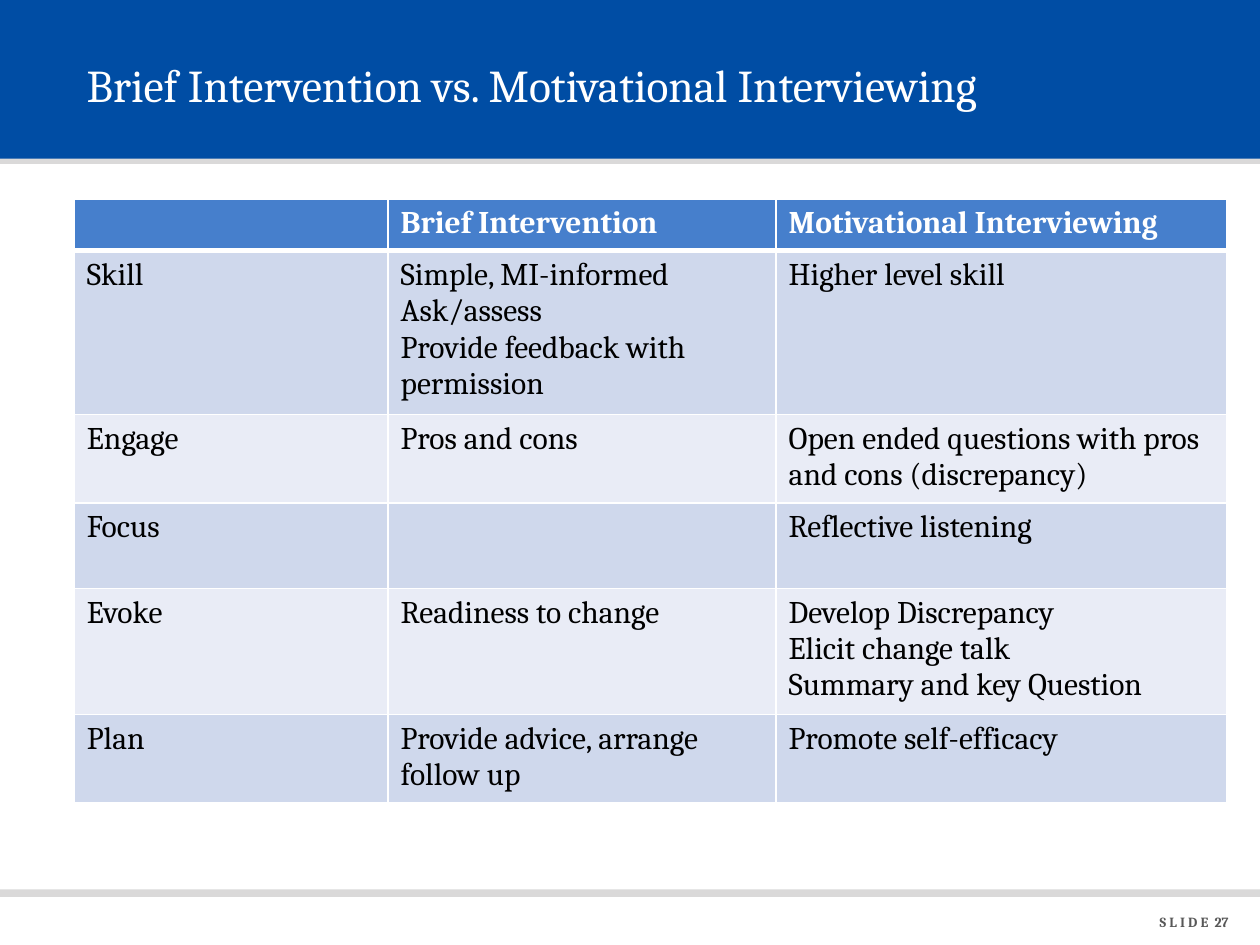
"""Build a slide comparing brief intervention with motivational interviewing."""
import pptx
import pptx.dml.color
import pptx.enum.shapes
import pptx.enum.text
import pptx.oxml
import pptx.util
from pptx.util import Inches


def color(hex_value):
    return pptx.dml.color.RGBColor.from_string(hex_value)


def write(frame, text, size=18, ink="000000", bold=False, align=None):
    frame.word_wrap = True
    for index, line in enumerate(text.split("\n")):
        paragraph = frame.add_paragraph() if index else frame.paragraphs[0]
        paragraph.alignment = align
        paragraph.font.size = pptx.util.Pt(size)
        run = paragraph.add_run()
        run.text = line
        run.font.name = "Cambria"
        run.font.size = pptx.util.Pt(size)
        run.font.bold = bold
        run.font.color.rgb = color(ink)


presentation = pptx.Presentation()
presentation.slide_width = Inches(10)
presentation.slide_height = Inches(7.5)
slide = presentation.slides.add_slide(presentation.slide_layouts[6])

bands = [
    (1.05, 0.25, "DAD9D9"),
    (-0.01, 1.27, "004DA4"),
    (7.06, 0.06, "DAD9D9"),
]
for top, height, fill in bands:
    band = slide.shapes.add_shape(
        pptx.enum.shapes.MSO_SHAPE.RECTANGLE,
        Inches(0), Inches(top), Inches(10), Inches(height))
    band.shadow.inherit = False
    band.fill.solid()
    band.fill.fore_color.rgb = color(fill)
    band.line.fill.background()

slide_number = slide.shapes.add_textbox(Inches(8.43), Inches(7.2), Inches(1.42), Inches(0.23))
write(slide_number.text_frame, "S L I D E  27", size=8, ink="585858", bold=True,
      align=pptx.enum.text.PP_ALIGN.RIGHT)

title = slide.shapes.add_textbox(Inches(0.59), Inches(0.17), Inches(8.9), Inches(1))
title.text_frame.vertical_anchor = pptx.enum.text.MSO_ANCHOR.MIDDLE
write(title.text_frame, "Brief Intervention vs. Motivational Interviewing", size=26, ink="FFFFFF")

comparison = [
    (0.41, "", "Brief Intervention", "Motivational Interviewing"),
    (1.25, "Skill", "Simple, MI-informed\nAsk/assess\nProvide feedback with permission",
     "Higher level skill"),
    (0.68, "Engage", "Pros and cons", "Open ended questions with pros and cons (discrepancy)"),
    (0.68, "Focus", "", "Reflective listening"),
    (0.96, "Evoke", "Readiness to change",
     "Develop Discrepancy\nElicit change talk\nSummary and key Question"),
    (0.68, "Plan", "Provide advice, arrange follow up", "Promote self-efficacy"),
]
column_widths = [2.49, 3.08, 3.58]
table = slide.shapes.add_table(
    len(comparison), len(column_widths), Inches(0.59), Inches(1.58),
    Inches(sum(column_widths)), Inches(sum(row[0] for row in comparison))).table
for column, width in zip(table.columns, column_widths):
    column.width = Inches(width)

for row_index, (height, *texts) in enumerate(comparison):
    table.rows[row_index].height = Inches(height)
    is_header = row_index == 0
    fill = "467FCC" if is_header else ("E9ECF6", "CFD8EC")[row_index % 2]
    for column_index, text in enumerate(texts):
        cell = table.cell(row_index, column_index)
        if text:
            write(cell.text_frame, text, ink="FFFFFF" if is_header else "000000", bold=is_header)
        borders = {"lnL": 1, "lnR": 1, "lnT": 3 if row_index == 1 else 1,
                   "lnB": 3 if is_header else 1}
        for side, points in borders.items():
            cell._tc.get_or_add_tcPr().append(pptx.oxml.parse_xml(
                f'<a:{side} xmlns:a="http://schemas.openxmlformats.org/drawingml/2006/main" '
                f'w="{pptx.util.Pt(points)}"><a:solidFill><a:srgbClr val="FFFFFF"/>'
                f'</a:solidFill></a:{side}>'))
        cell.fill.solid()
        cell.fill.fore_color.rgb = color(fill)

presentation.save("out.pptx")
